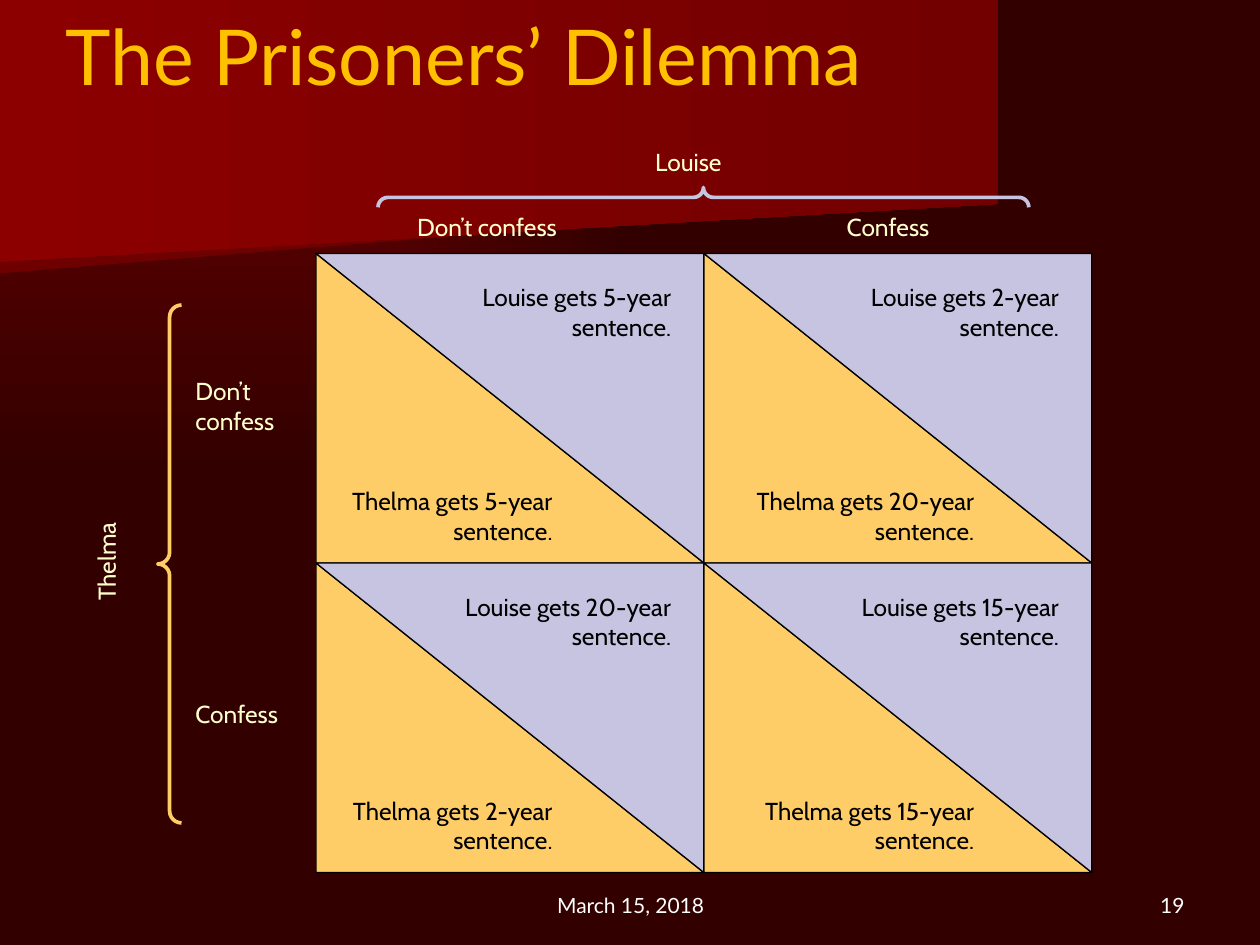
from lxml.etree import SubElement
from pptx import Presentation
from pptx.dml.color import RGBColor
from pptx.enum.shapes import MSO_SHAPE
from pptx.enum.text import MSO_ANCHOR, PP_ALIGN
from pptx.oxml.ns import qn
from pptx.util import Cm, Pt

LILAC, GOLD, CREAM, BLACK, WHITE = "C7C4E2", "FFCD67", "FFFFCC", "000000", "FFFFFF"
LEFT, TOP, CELL_W, CELL_H = 6.37, 5.11, 7.82, 6.24
THELMA_WIDTHS = (4.45, 5.13)
YEARS = (((5, 5), (20, 2)), ((2, 20), (15, 15)))
LABEL = {"size": Pt(14), "name": "Cabin"}
FOOTER = {"size": Pt(12), "name": "Lato"}


def rgb(value):
    return RGBColor.from_string(value)


def set_gradient(fill, start, end):
    fill.gradient()
    for stop, color in zip(fill.gradient_stops, (start, end)):
        stop.color.rgb = rgb(color)


def set_background(s):
    set_gradient(s.background.fill, "720000", "330000")
    grad = next(s._element.iter(qn("a:gradFill")))
    grad.remove(grad.find(qn("a:lin")))
    path = SubElement(grad, qn("a:path"), {"path": "rect"})
    SubElement(path, qn("a:fillToRect"), {"l": "0", "t": "0", "r": "100000", "b": "100000"})


def add_polygon(s, points):
    points = [(Cm(x), Cm(y)) for x, y in points]
    builder = s.shapes.build_freeform(*points[0])
    builder.add_line_segments(points[1:], close=True)
    sp = builder.convert_to_shape()
    sp.shadow.inherit = False
    return sp


def add_band(s, points, start, end):
    sp = add_polygon(s, points)
    set_gradient(sp.fill, start, end)
    sp.fill.gradient_angle = 0
    sp.line.fill.background()


def add_triangle(s, points, color):
    sp = add_polygon(s, points)
    sp.fill.solid()
    sp.fill.fore_color.rgb = rgb(color)
    sp.line.color.rgb = rgb(BLACK)
    sp.line.width = Pt(0.75)


def add_brace(s, x, y, w, h, color, rotation=0):
    sp = s.shapes.add_shape(MSO_SHAPE.LEFT_BRACE, Cm(x), Cm(y), Cm(w), Cm(h))
    sp.adjustments[0] = 0.5
    sp.rotation = rotation
    sp.shadow.inherit = False
    sp.fill.background()
    sp.line.color.rgb = rgb(color)
    sp.line.width = Pt(2.13)


def add_text(s, text, x, y, w, h, color, font, align=PP_ALIGN.LEFT,
             anchor=MSO_ANCHOR.TOP, inset=True, wrap=True):
    sp = s.shapes.add_textbox(Cm(x), Cm(y), Cm(w), Cm(h))
    tf = sp.text_frame
    frame = {"word_wrap": wrap, "vertical_anchor": anchor}
    if not inset:
        frame |= {f"margin_{side}": 0 for side in ("left", "top", "right", "bottom")}
    for key, value in frame.items():
        setattr(tf, key, value)
    p = tf.paragraphs[0]
    p.alignment = align
    r = p.add_run()
    r.text = text
    for key, value in font.items():
        setattr(r.font, key, value)
    r.font.color.rgb = rgb(color)
    return sp


def add_label(s, text, x, y, w, h=0.61, wrap=False):
    return add_text(s, text, x, y, w, h, CREAM, LABEL, inset=False, wrap=wrap)


def add_outcome(s, player, years, x, y, w):
    add_text(s, f"{player} gets {years}-year sentence.", x, y, w, 0.94, BLACK, LABEL,
             align=PP_ALIGN.RIGHT, inset=False)


def add_cell(s, row, col):
    x, y = LEFT + col * CELL_W, TOP + row * CELL_H
    right, bottom = x + CELL_W, y + CELL_H
    thelma, louise = YEARS[row][col]
    add_triangle(s, [(right, bottom), (x, bottom), (x, y)], GOLD)
    add_triangle(s, [(x, y), (right, y), (right, bottom)], LILAC)
    add_outcome(s, "Louise", louise, x + 2.71, y + 0.58, 4.45)
    add_outcome(s, "Thelma", thelma, x + 0.32, y + 4.69, THELMA_WIDTHS[col])


def main():
    """Build the payoff matrix slide."""
    prs = Presentation()
    prs.slide_width, prs.slide_height = Cm(25.4), Cm(19.05)
    s = prs.slides.add_slide(prs.slide_layouts[6])
    set_background(s)
    add_band(s, [(19.76, 3.89), (0, 5.51), (0, 2.57), (19.79, 2.57)], "6F0000", "720000")
    add_band(s, [(20.12, 4.11), (0, 5.28), (0, 0), (20.12, 0)], "8C0000", "720000")
    add_text(s, "The Prisoners’ Dilemma", 1.07, 0.25, 24.33, 1.7, "FFC000",
             {"size": Pt(44), "name": "Lato"}, anchor=MSO_ANCHOR.MIDDLE)
    for row in range(2):
        for col in range(2):
            add_cell(s, row, col)
    add_label(s, "Louise", 13.21, 2.97, 1.47)
    add_label(s, "Don’t confess", 8.41, 4.27, 3.02)
    add_label(s, "Confess", 17.07, 4.27, 1.83)
    add_label(s, "Don’t confess", 3.94, 7.59, 2.74, 1.19, wrap=True)
    add_label(s, "Confess", 3.94, 14.1, 1.83)
    add_label(s, "Thelma", 0.97, 10.62, 2.36, wrap=True).rotation = 270
    add_brace(s, 3.18, 6.15, 0.48, 10.44, GOLD)
    add_brace(s, 13.98, -2.58, 0.4, 13.12, LILAC, rotation=90)
    add_text(s, "March 15, 2018", 8.69, 17.35, 8.05, 1.27, WHITE, FOOTER,
             align=PP_ALIGN.CENTER, anchor=MSO_ANCHOR.BOTTOM)
    add_text(s, "19", 18.21, 17.35, 5.92, 1.27, WHITE, FOOTER,
             align=PP_ALIGN.RIGHT, anchor=MSO_ANCHOR.BOTTOM)
    prs.save("out.pptx")


if __name__ == "__main__":
    main()
